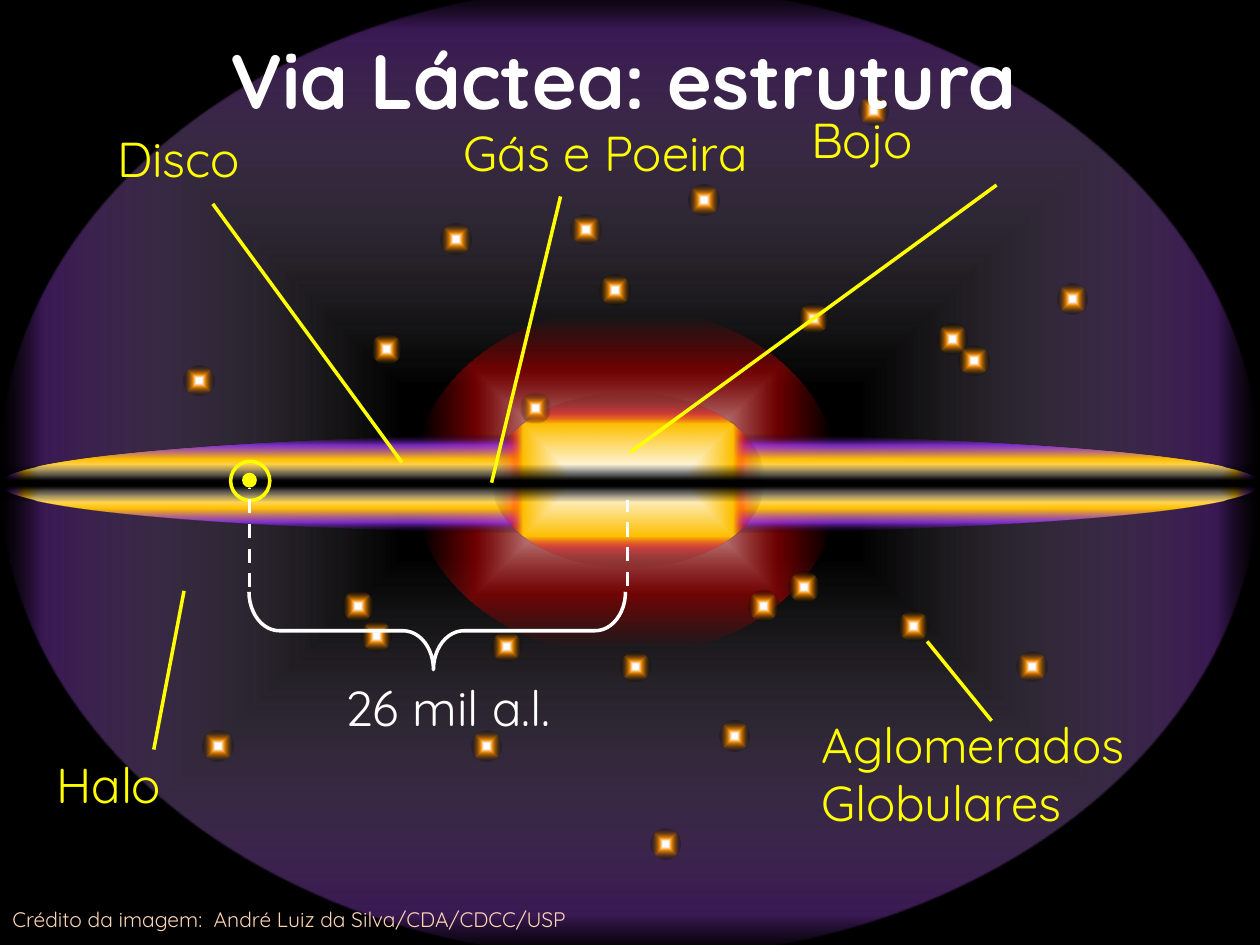
from dataclasses import dataclass

from lxml.etree import SubElement
from pptx import Presentation
from pptx.dml.color import RGBColor
from pptx.enum.dml import MSO_LINE
from pptx.enum.shapes import MSO_CONNECTOR, MSO_SHAPE
from pptx.enum.text import MSO_ANCHOR, PP_ALIGN
from pptx.oxml.ns import qn
from pptx.util import Cm, Pt


@dataclass(frozen=True)
class Theme:
    """Colours, gradients and type sizes of the slide."""
    font: str = "Quicksand"
    black: str = "000000"
    white: str = "FFFFFF"
    yellow: str = "FFFF00"
    peach: str = "FCD5B5"
    title: int = 44
    label: int = 28
    small: int = 12
    stroke: int = 2
    halo: tuple = ((18, "FFFFFF", 0), (91, "7030A0", 52), (100, "000000", 23))
    glow: tuple = ((9, "FFFFFF", 100), (64, "C00000", 56),
                   (95, "C00000", 0), (100, "000000", 0))
    disc: tuple = ((9, "FFFFFF", 100), (49, "FFC000", 100),
                   (77, "9933FF", 76), (100, "000000", 0))
    bulge: tuple = ((9, "FFFFFF", 100), (64, "FFC000", 100),
                    (78, "FF0000", 30), (100, "000000", 0))
    dust: tuple = ((11, "000000", 100), (76, "000000", 0),
                   (90, "000000", 0), (100, "000000", 0))
    star: tuple = ((18, "FFFFFF", 100), (39, "EE8800", 100), (100, "000000", 23))
    faint: tuple = ((18, "FFFFFF", 100), (39, "EE8800", 100), (100, "000000", 0))


class Painter:
    """Draws themed elements on the current slide."""

    def __init__(self, slide, theme):
        """Keep the slide and theme, and paint the background."""
        self.slide, self.theme = slide, theme
        fill = slide.background.fill
        fill.solid()
        fill.fore_color.rgb = RGBColor.from_string(theme.black)

    def shape(self, box, kind=MSO_SHAPE.OVAL, fill=None, line=None, turn=0):
        """Add a preset shape with a plain fill or an outline."""
        item = self.slide.shapes.add_shape(kind, *map(Cm, box))
        item.shadow.inherit = False
        item.rotation = turn
        if fill:
            item.fill.solid()
            item.fill.fore_color.rgb = RGBColor.from_string(fill)
        else:
            item.fill.background()
        if line:
            item.line.color.rgb = RGBColor.from_string(line)
            item.line.width = Pt(self.theme.stroke)
        else:
            item.line.fill.background()
        return item

    def glow(self, box, stops, kind=MSO_SHAPE.OVAL, turn=0):
        """Add a shape shaded outwards from its centre."""
        item = self.shape(box, kind, turn=turn)
        props = item._element.spPr
        grad = SubElement(props, qn("a:gradFill"), rotWithShape="1")
        props.replace(props.find(qn("a:noFill")), grad)
        row = SubElement(grad, qn("a:gsLst"))
        for place, tone, alpha in stops:
            stop = SubElement(row, qn("a:gs"), pos=str(place * 1000))
            color = SubElement(stop, qn("a:srgbClr"), val=tone)
            if alpha < 100:
                SubElement(color, qn("a:alpha"), val=str(alpha * 1000))
        shade = SubElement(grad, qn("a:path"), path="shape")
        SubElement(shade, qn("a:fillToRect"), dict.fromkeys("ltrb", "50000"))

    def stars(self, spots, stops):
        """Add one globular cluster at each spot."""
        for left, top in spots:
            self.glow((left, top, 0.61, 0.61), stops)

    def line(self, start, end, color, dash=None):
        """Add a straight line."""
        item = self.slide.shapes.add_connector(
            MSO_CONNECTOR.STRAIGHT, *map(Cm, start + end))
        item.line.color.rgb = RGBColor.from_string(color)
        item.line.width = Pt(self.theme.stroke)
        if dash:
            item.line.dash_style = dash
        SubElement(item._element.spPr, qn("a:effectLst"))

    def text(self, box, words, size, color, anchor=MSO_ANCHOR.TOP,
             align=PP_ALIGN.LEFT, bold=False):
        """Add a wrapped text box holding one run."""
        frame = self.slide.shapes.add_textbox(*map(Cm, box)).text_frame
        frame.word_wrap = True
        frame.vertical_anchor = anchor
        para = frame.paragraphs[0]
        para.alignment = align
        run = para.add_run()
        run.text = words
        run.font.name = self.theme.font
        run.font.size = Pt(size)
        run.font.bold = bold
        run.font.color.rgb = RGBColor.from_string(color)

    def label(self, words, box, start, end):
        """Add a yellow label with its pointer."""
        self.line(start, end, self.theme.yellow)
        self.text(box, words, self.theme.label, self.theme.yellow)


INNER = (
    (15.09, 11.91), (9.91, 12.73), (12.5, 13.13), (16.1, 6.12),
    (12.09, 5.54), (7.49, 6.73), (7.29, 12.52), (18.11, 12.32),
    (13.89, 3.73), (8.89, 4.52), (14.5, 14.53), (9.5, 14.73),
    (18.9, 6.53), (6.91, 11.91), (15.9, 11.53), (11.51, 4.32),
)
OUTER = (
    (19.33, 6.96), (21.31, 5.72), (13.11, 16.71), (3.71, 7.37),
    (17.3, 1.93), (20.5, 13.13), (4.09, 14.73),
)
LABELS = (
    ("Bojo", (16.1, 2.08, 8, 1.45), (12.7, 9.12), (20.09, 3.73)),
    ("Aglomerados Globulares", (16.31, 14.27, 8, 2.64), (19.99, 14.53), (18.69, 12.93)),
    ("Disco", (2.11, 2.46, 4.6, 1.45), (8.1, 9.32), (4.29, 4.11)),
    ("Gás e Poeira", (9.09, 2.34, 7.8, 1.45), (9.91, 9.73), (11.3, 3.96)),
    ("Halo", (0.89, 15.09, 4.6, 1.45), (3.1, 15.11), (3.71, 11.91)),
)


def main():
    """Build the slide and save it."""
    deck = Presentation()
    deck.slide_width, deck.slide_height = Cm(25.4), Cm(19.05)
    theme = Theme()
    art = Painter(deck.slides.add_slide(deck.slide_layouts[6]), theme)

    art.glow((0, -0.28, 25.4, 19.61), theme.halo)
    art.glow((8.31, 6.2, 8.61, 7.01), theme.glow, turn=0.1)
    art.text((0, 18.16, 18.85, 0.76),
             "Crédito da imagem:  André Luiz da Silva/CDA/CDCC/USP",
             theme.small, theme.peach)
    art.glow((0, 8.74, 25.4, 2.01), theme.disc)
    art.glow((9.91, 7.92, 5.49, 3.53), theme.bulge, turn=0.1)
    art.glow((-9.7, 9.25, 42.39, 0.99), theme.dust, MSO_SHAPE.RECTANGLE)
    art.stars(INNER, theme.star)
    art.stars([(10.49, 7.92)], theme.faint)

    brace = art.shape((8.03, 8.92, 1.57, 7.59), MSO_SHAPE.LEFT_BRACE,
                      line=theme.white, turn=270)
    brace.adjustments[0], brace.adjustments[1] = 0.39, 0.49
    art.text((6.71, 12.95, 6.22, 2.59), "26 mil a.l.", theme.label,
             theme.white, MSO_ANCHOR.MIDDLE)
    art.shape((4.65, 9.3, 0.79, 0.79), line=theme.yellow)
    art.shape((4.88, 9.53, 0.3, 0.3), fill=theme.yellow)
    for left, low, high in ((5.03, 11.84, 9.83), (12.65, 11.81, 10.08)):
        art.line((left, low), (left, high), theme.white, MSO_LINE.DASH)

    for label in LABELS:
        art.label(*label)
    art.stars(OUTER, theme.star)
    art.text((1.78, 0, 21.59, 3.18), "Via Láctea: estrutura", theme.title,
             theme.white, MSO_ANCHOR.MIDDLE, PP_ALIGN.CENTER, True)
    deck.save("out.pptx")


if __name__ == "__main__":
    main()
